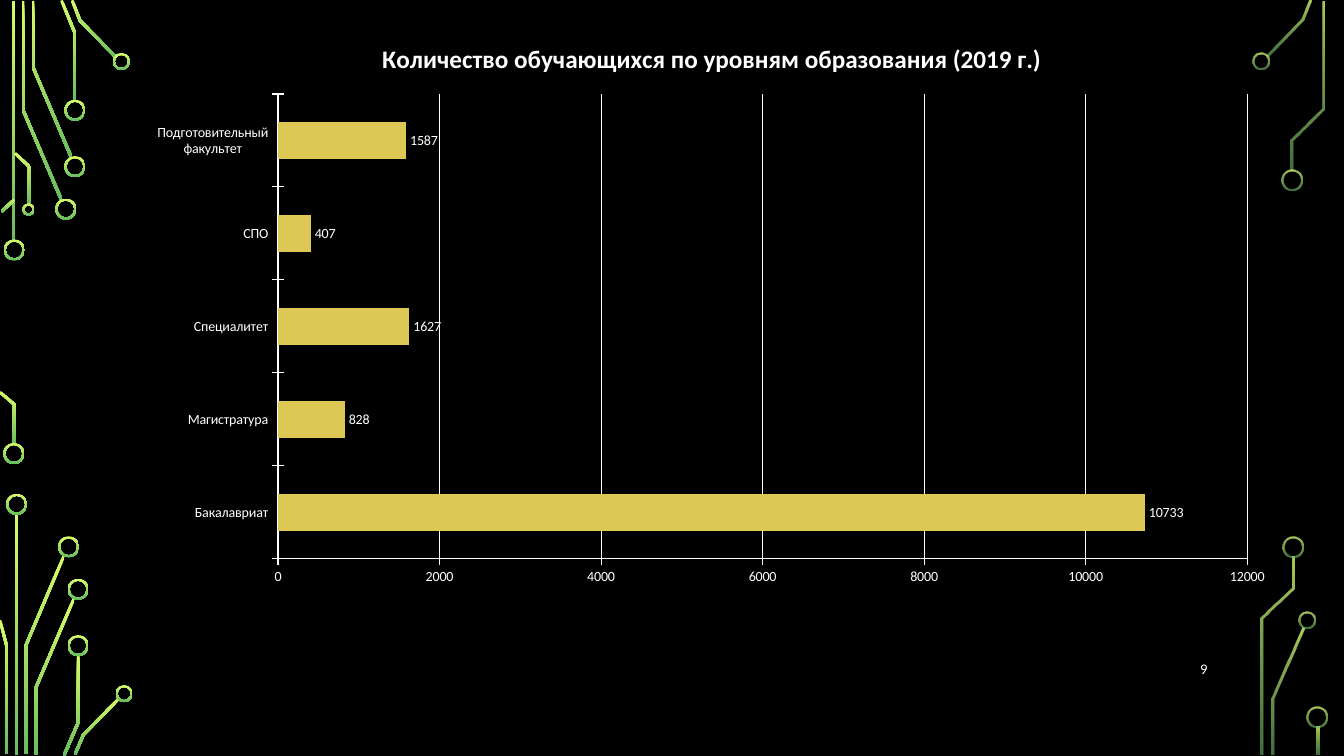
"""Builds a slide with a bar chart of student numbers between two circuit-pattern margins."""
from lxml import etree
from pptx import Presentation
from pptx import util as u
from pptx.chart.data import CategoryChartData
from pptx.dml.color import RGBColor
from pptx.enum import chart as ch, shapes, text
from pptx.oxml import parse_xml
from pptx.oxml.ns import nsdecls, qn

FONT = "Calibri"
WHITE = "FFFFFF"
TRACE_WIDTH, RING_WIDTH = 0.07, 0.05
LARGE, MEDIUM, SMALL = 0.53, 0.43, 0.31
STUDENTS = {
    "Бакалавриат": 10733,
    "Магистратура": 828,
    "Специалитет": 1627,
    "СПО": 407,
    "Подготовительный факультет": 1587,
}
LEFT_TRACES = [
    [(0.34, 0.03), (0.34, 6.1)],
    [(0.58, 0.03), (0.58, 2.77), (1.55, 5.04)],
    [(0.83, 0.03), (0.83, 1.69), (1.8, 3.97)],
    [(1.55, 0.01), (1.89, 0.84), (1.89, 2.54)],
    [(1.82, 0.01), (2.02, 0.52), (2.93, 1.45)],
    [(0.04, 5.33), (0.36, 5.03)],
    [(0, 9.88), (0.36, 10.19), (0.36, 11.2)],
    [(0.38, 3.86), (0.74, 4.2), (0.74, 5.16)],
    [(0.42, 12.95), (0.42, 19.03)],
    [(1.61, 14.01), (0.65, 16.27), (0.65, 19)],
    [(0, 15.63), (0.17, 16.28), (0.17, 19)],
    [(1.87, 15.07), (0.9, 17.34), (0.9, 19.02)],
    [(1.97, 16.51), (1.97, 18.21), (1.61, 19.04)],
    [(3, 17.6), (2.1, 18.52), (1.89, 19.01)],
]
LEFT_RINGS = [
    (0.36, 6.3, LARGE), (0.35, 11.43, LARGE), (1.66, 5.27, LARGE), (1.89, 4.2, LARGE),
    (1.89, 2.78, LARGE), (3.06, 1.55, MEDIUM), (0.72, 5.28, SMALL), (0.42, 12.71, LARGE),
    (1.73, 13.78, LARGE), (1.97, 14.85, LARGE), (1.97, 16.27, LARGE), (3.13, 17.48, MEDIUM),
]
RIGHT_TRACES = [
    [(0.43, 1.41), (1.33, 0.5), (1.53, 0.01)],
    [(0.57, 19.02), (0.57, 17.61), (1.34, 15.84)],
    [(1.06, 4.29), (1.06, 3.52), (1.84, 2.73), (1.84, 0.03)],
    [(0.31, 19.02), (0.31, 15.58), (1.1, 14.82), (1.1, 14.02)],
    [(1.71, 18.31), (1.71, 19.02)],
]
RIGHT_RINGS = [
    (0.29, 1.54, MEDIUM), (1.07, 4.54, LARGE), (1.43, 15.63, MEDIUM),
    (1.09, 13.78, LARGE), (1.68, 18.08, LARGE),
]


def color(value):
    """Return the colour for a hex string."""
    return RGBColor.from_string(value)


def apply(target, formats):
    """Set each attribute of the target from a dict of format values."""
    for key, value in formats.items():
        setattr(target, key, value)


def paint_gradient(part, opacities):
    """Fill a part from yellow-green at the top to green at the bottom."""
    part.shadow.inherit = False
    part.line.fill.background()
    part.fill.gradient()
    part.fill.gradient_angle = 270
    for stop, tint in zip(part.fill.gradient_stops, ("D8FC68", "66BD5F")):
        stop.color.rgb = color(tint)
    for tint, opacity in zip(part._element.spPr.iter(qn("a:srgbClr")), opacities):
        etree.SubElement(tint, qn("a:alpha"), val=str(opacity * 1000))


def trace_outline(points):
    """Return the outline of a mitred strip that runs along the points."""
    route = [complex(*point) for point in points]
    normals = [1j * (end - start) / abs(end - start) for start, end in zip(route, route[1:])]
    offsets = []
    for before, after in zip(normals[:1] + normals, normals + normals[-1:]):
        dot = (before * after.conjugate()).real
        offsets.append((before + after) / (1 + dot) * TRACE_WIDTH / 2)
    side = [point + offset for point, offset in zip(route, offsets)]
    return side + [point - offset for point, offset in zip(route, offsets)][::-1]


def add_circuit(slide, box, traces, rings, opacities):
    """Draw the traces and rings of one circuit margin inside its box."""
    left, top = box
    for points in traces:
        outline = [(u.Cm(left + corner.real), u.Cm(top + corner.imag)) for corner in trace_outline(points)]
        builder = slide.shapes.build_freeform(*outline[0])
        builder.add_line_segments(outline[1:], close=True)
        paint_gradient(builder.convert_to_shape(), opacities)
    for x, y, size in rings:
        ring = slide.shapes.add_shape(
            shapes.MSO_SHAPE.DONUT, u.Cm(left + x - size / 2), u.Cm(top + y - size / 2), u.Cm(size), u.Cm(size))
        ring.adjustments[0] = RING_WIDTH / size
        paint_gradient(ring, opacities)


def add_students_chart(slide, box):
    """Place the bar chart of students by level of education in its box."""
    students = CategoryChartData()
    students.categories = list(STUDENTS)
    students.add_series("Series 1", list(STUDENTS.values()))
    chart = slide.shapes.add_chart(
        ch.XL_CHART_TYPE.BAR_CLUSTERED, *(u.Cm(length) for length in box), students).chart
    base = {"name": FONT, "size": u.Pt(10)}
    apply(chart.font, base)
    chart.font.color.rgb = color(WHITE)
    apply(chart, {"has_legend": False, "has_title": True})
    heading = chart.chart_title.text_frame
    heading.text = "Количество обучающихся по уровням образования (2019 г.)"
    heading_font = heading.paragraphs[0].runs[0].font
    apply(heading_font, {"name": FONT, "size": u.Pt(18), "bold": True})
    heading_font.color.rgb = color(WHITE)

    levels, counts = chart.category_axis, chart.value_axis
    apply(counts, {"minimum_scale": 0, "maximum_scale": 12000, "major_unit": 2000, "has_major_gridlines": True})
    for axis in (levels, counts):
        axis.major_tick_mark = ch.XL_TICK_MARK.CROSS
    for line in (levels.format.line, counts.format.line, counts.major_gridlines.format.line):
        line.color.rgb = color(WHITE)
        line.width = u.Pt(0.75)

    plot = chart.plots[0]
    apply(plot, {"gap_width": 150, "vary_by_categories": False, "has_data_labels": True})
    apply(plot.data_labels, {"show_value": True, "position": ch.XL_LABEL_POSITION.OUTSIDE_END})
    apply(plot.data_labels.font, base)
    plot.data_labels.font.color.rgb = color(WHITE)
    bars = plot.series[0].format.fill
    bars.solid()
    bars.fore_color.rgb = color("DDC855")

    area = chart._chartSpace.chart.plotArea
    for layout in area.findall(qn("c:layout")):
        area.remove(layout)
    places = {"layoutTarget": "inner", "xMode": "edge", "yMode": "edge", "x": 0.124, "y": 0.128, "w": 0.84, "h": 0.806}
    settings = "".join(f'<c:{key} val="{value}"/>' for key, value in places.items())
    area.insert(0, parse_xml(f'<c:layout {nsdecls("c")}><c:manualLayout>{settings}</c:manualLayout></c:layout>'))


def add_page_number(slide, box):
    """Write the page number at the right of its box."""
    frame = slide.shapes.add_textbox(*(u.Cm(length) for length in box)).text_frame
    apply(frame, {"word_wrap": True, "vertical_anchor": text.MSO_ANCHOR.MIDDLE})
    paragraph = frame.paragraphs[0]
    apply(paragraph, {"text": "9", "alignment": text.PP_ALIGN.RIGHT})
    number_font = paragraph.runs[0].font
    apply(number_font, {"name": FONT, "size": u.Pt(10.5)})
    number_font.color.rgb = color(WHITE)


def main():
    """Build the slide and save it."""
    deck = Presentation()
    apply(deck, {"slide_width": u.Cm(33.87), "slide_height": u.Cm(19.05)})
    slide = deck.slides.add_slide(deck.slide_layouts[6])
    slide.background.fill.solid()
    slide.background.fill.fore_color.rgb = color("000000")
    add_circuit(slide, (0, 0), LEFT_TRACES, LEFT_RINGS, (100, 100))
    add_circuit(slide, (31.5, 0), RIGHT_TRACES, RIGHT_RINGS, (80, 60))
    add_page_number(slide, (28.55, 16.33, 2.13, 1.02))
    add_students_chart(slide, (3.4, 0.51, 29.08, 14.53))
    deck.save("out.pptx")


if __name__ == "__main__":
    main()
